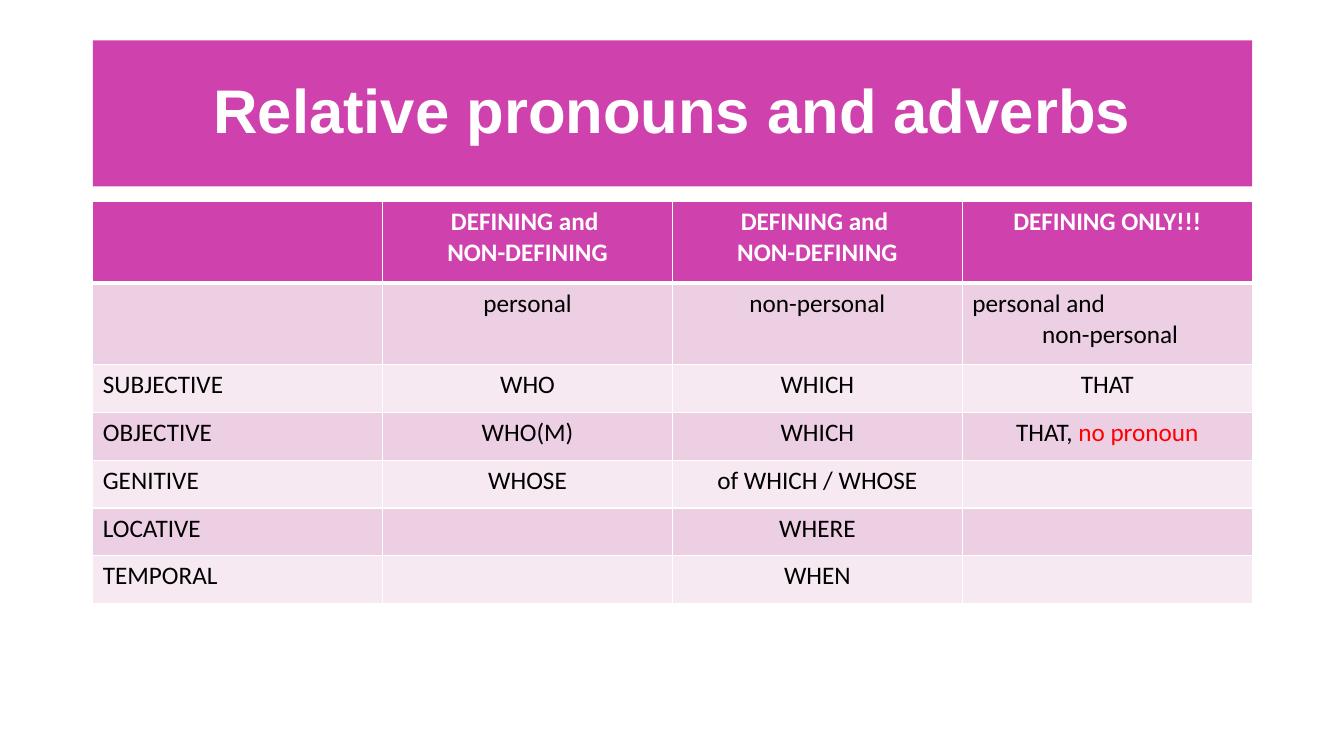
from lxml.etree import SubElement as Sub
from pptx import Presentation
from pptx.dml.color import RGBColor
from pptx.enum.text import MSO_ANCHOR as Anchor, PP_ALIGN as Align
from pptx.oxml.ns import qn
from pptx.util import Inches, Pt

# Content: a cell is a list of lines, a line is a list of runs
TITLE = "Relative pronouns and adverbs"
BOTH = [["DEFINING and "], ["NON-DEFINING"]]
NONE = "no pronoun"
ROWS = [
    [[], BOTH, BOTH, [["DEFINING ONLY!!!"]]],
    [[], [["personal"]], [["non-personal"]],
     [["personal and"], [" non-personal"]]],
    [[["SUBJECTIVE"]], [["WHO"]], [["WHICH"]], [["THAT"]]],
    [[["OBJECTIVE"]], [["WHO(M)"]], [["WHICH"]], [["THAT, ", NONE]]],
    [[["GENITIVE"]], [["WHOSE"]], [["of WHICH / WHOSE"]], []],
    [[["LOCATIVE"]], [], [["WHERE"]], []],
    [[["TEMPORAL"]], [], [["WHEN"]], []],
]
LEFT_LINES = {"personal and"}

PINK = RGBColor(0xCF, 0x41, 0xAD)
DARK = RGBColor(0xED, 0xCF, 0xE3)
PALE = RGBColor(0xF6, 0xE9, 0xF1)
WHITE = RGBColor(0xFF, 0xFF, 0xFF)
BLACK = RGBColor(0, 0, 0)
RED = RGBColor(0xFF, 0, 0)

# Layout
LEFT, WIDTH = 0.92, 11.5
TOP, HEIGHT = 2, 3.99
TALL = 0.81
LOW = (HEIGHT - 2 * TALL) / (len(ROWS) - 2)


def add_run(para, text, font, size, color, bold):
    run = para.add_run()
    run.text = text
    run.font.name = font
    run.font.size = Pt(size)
    run.font.bold = bold
    run.font.color.rgb = color


def set_edge(cell, side, width):
    line = Sub(cell._tc.get_or_add_tcPr(), qn("a:ln" + side), w=str(Pt(width)))
    fill = Sub(line, qn("a:solidFill"))
    Sub(fill, qn("a:srgbClr"), val=str(WHITE))


def fill_cell(cell, lines, row, col):
    head = row == 0
    # Borders come before the fill; a thick rule runs under the header
    for side in "LRTB":
        thick = (side == "B" and head) or (side == "T" and row == 1)
        set_edge(cell, side, 3 if thick else 1)
    cell.fill.solid()
    cell.fill.fore_color.rgb = PINK if head else DARK if row % 2 else PALE

    frame = cell.text_frame
    frame.paragraphs[0].font.size = Pt(18)
    for i, line in enumerate(lines):
        para = frame.add_paragraph() if i else frame.paragraphs[0]
        left = col == 0 or line[0] in LEFT_LINES
        para.alignment = Align.LEFT if left else Align.CENTER
        for text in line:
            color = WHITE if head else RED if text == NONE else BLACK
            add_run(para, text, "Calibri", 18, color, head)


deck = Presentation()
deck.slide_width, deck.slide_height = Inches(13.33), Inches(7.5)
slide = deck.slides.add_slide(deck.slide_layouts[5])

# Title band
title = slide.shapes.title
title.left, title.top = Inches(LEFT), Inches(0.4)
title.width, title.height = Inches(WIDTH), Inches(1.45)
title.fill.solid()
title.fill.fore_color.rgb = PINK
title.text_frame.vertical_anchor = Anchor.MIDDLE
para = title.text_frame.paragraphs[0]
para.alignment = Align.CENTER
para.line_spacing = 0.9
add_run(para, TITLE, "Arial", 44, WHITE, True)

# Pronoun table
table = slide.shapes.add_table(
    len(ROWS), len(ROWS[0]), Inches(LEFT), Inches(TOP),
    Inches(WIDTH), Inches(HEIGHT)).table
for r, cells in enumerate(ROWS):
    table.rows[r].height = Inches(TALL if r < 2 else LOW)
    for c, lines in enumerate(cells):
        fill_cell(table.cell(r, c), lines, r, c)

deck.save("out.pptx")
